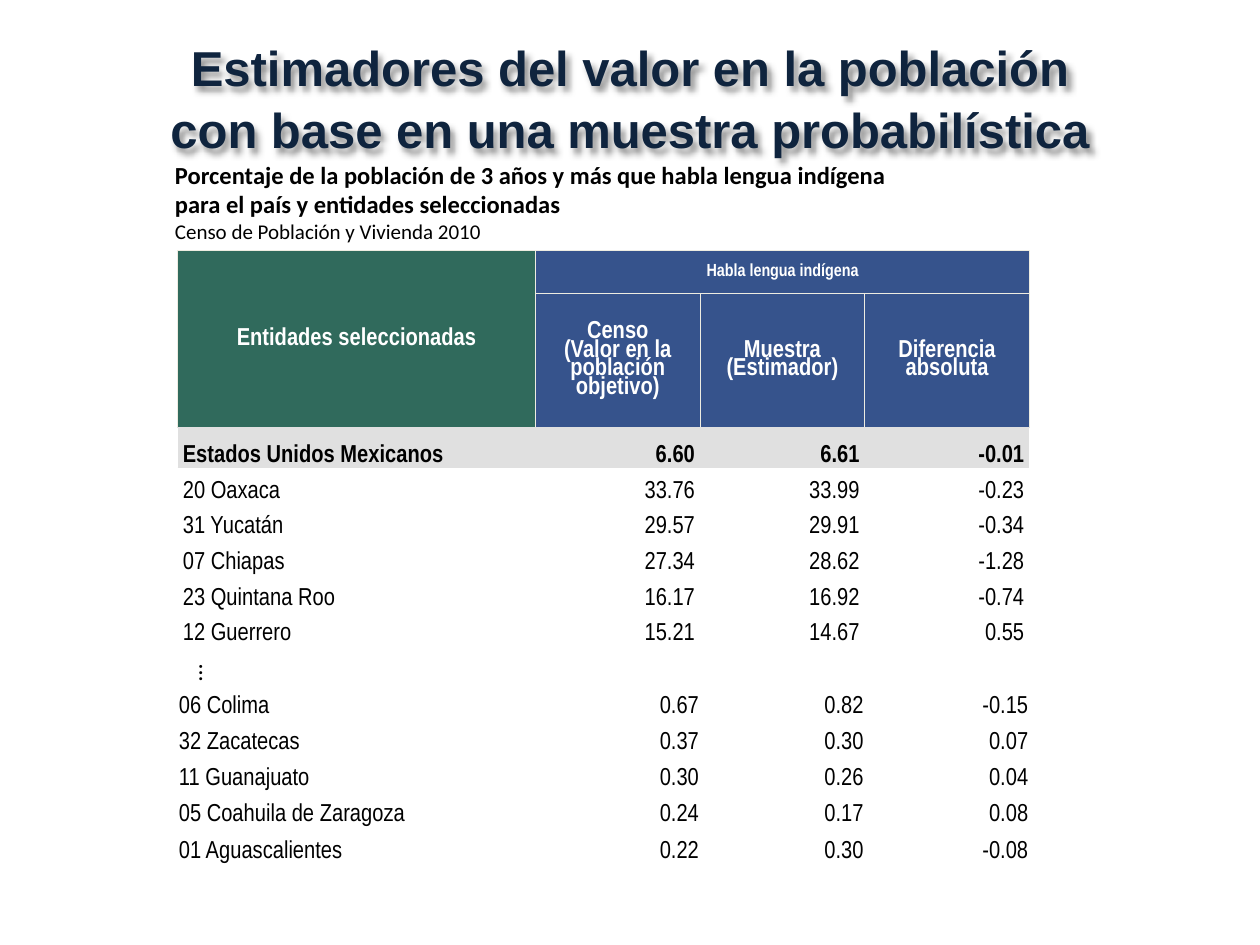
from lxml.etree import SubElement
from pptx import Presentation
from pptx.dml.color import RGBColor
from pptx.enum.text import MSO_ANCHOR, PP_ALIGN
from pptx.oxml import parse_xml
from pptx.oxml.ns import qn
from pptx.util import Pt

NS = 'xmlns:a="http://schemas.openxmlformats.org/drawingml/2006/main"'
LEFT, MID, RIGHT = PP_ALIGN.LEFT, PP_ALIGN.CENTER, PP_ALIGN.RIGHT


def write(par, text, size=14, font="Arial Narrow", color="000000",
          bold=False, align=LEFT, space=None):
    par.text = text
    par.alignment = align
    if space:
        par.line_spacing = space
    for run in par.runs:
        run.font.size = Pt(size)
        run.font.name = font
        run.font.bold = bold
        run.font.color.rgb = RGBColor.from_string(color)


def dress(cell, fill=None, edges=None, side=3, anchor=MSO_ANCHOR.BOTTOM):
    cell.margin_left = cell.margin_right = Pt(side)
    cell.margin_top, cell.margin_bottom = Pt(0.7), Pt(0)
    cell.vertical_anchor = anchor
    props = cell._tc.get_or_add_tcPr()
    for edge, color in (edges or {}).items():
        line = SubElement(props, qn("a:ln" + edge), w=str(Pt(0.5)))
        solid = SubElement(line, qn("a:solidFill"))
        SubElement(solid, qn("a:srgbClr"), val=color)
    if fill:
        cell.fill.solid()
        cell.fill.fore_color.rgb = RGBColor.from_string(fill)
    else:
        cell.fill.background()


prs = Presentation()
prs.slide_width, prs.slide_height = Pt(720), Pt(540)
slide = prs.slides.add_slide(prs.slide_layouts[5])

# Title with a soft shadow
title = slide.shapes.title
title.left, title.top, title.width, title.height = Pt(0), Pt(15), Pt(720), Pt(83)
frame = title.text_frame
frame.word_wrap = True
frame.vertical_anchor = MSO_ANCHOR.TOP
frame.margin_top = Pt(5)
write(frame.paragraphs[0],
      "Estimadores del valor en la población\vcon base en una muestra probabilística",
      size=28, font="Arial", color="0F243E", bold=True, align=MID, space=1.05)
title._element.spPr.append(parse_xml(
    f'<a:effectLst {NS}><a:outerShdw blurRad="{Pt(4)}" dist="{Pt(3)}" dir="2700000" '
    'algn="tl" rotWithShape="0"><a:srgbClr val="000000"><a:alpha val="43000"/>'
    '</a:srgbClr></a:outerShdw></a:effectLst>'))

# Table heading
box = slide.shapes.add_textbox(Pt(92.9), Pt(87.8), Pt(517.7), Pt(55.4))
frame = box.text_frame
frame.word_wrap = True
write(frame.paragraphs[0],
      "Porcentaje de la población de 3 años y más que habla lengua indígena\v"
      "para el país y entidades seleccionadas", font="Calibri", bold=True)
write(frame.add_paragraph(), "Censo de Población y Vivienda 2010", size=12, font="Calibri")

# Table grid
rows = [
    ("Estados Unidos Mexicanos", "6.60", "6.61", "-0.01"),
    ("20 Oaxaca", "33.76", "33.99", "-0.23"),
    ("31 Yucatán", "29.57", "29.91", "-0.34"),
    ("07 Chiapas", "27.34", "28.62", "-1.28"),
    ("23 Quintana Roo", "16.17", "16.92", "-0.74"),
    ("12 Guerrero", "15.21", "14.67", "0.55"),
    ("…", "", "", ""),
    ("06 Colima", "0.67", "0.82", "-0.15"),
    ("32 Zacatecas", "0.37", "0.30", "0.07"),
    ("11 Guanajuato", "0.30", "0.26", "0.04"),
    ("05 Coahuila de Zaragoza", "0.24", "0.17", "0.08"),
    ("01 Aguascalientes", "0.22", "0.30", "-0.08"),
]
wide = [204.5] + [94.1] * 3
high = [24.5, 76.5, 23] + [20.4] * 5 + [20.7] * 6
table = slide.shapes.add_table(len(high), len(wide), Pt(101.5), Pt(143.3),
                               Pt(sum(wide)), Pt(sum(high))).table
table.first_row = table.horz_banding = False
table._tbl.tblPr.find(qn("a:tableStyleId")).text = "{2D5ABB26-0587-4C30-8999-92F81FD0307C}"
for col, size in zip(table.columns, wide):
    col.width = Pt(size)
for row, size in zip(table.rows, high):
    row.height = Pt(size)

# Header cells
table.cell(0, 0).merge(table.cell(1, 0))
table.cell(0, 1).merge(table.cell(0, 3))
pale, gray = "EEECE1", "E0E0E0"
for r in range(2):
    for c in range(4):
        edges = {"L": pale, "R": pale, "T": pale, "B": gray if r or not c else pale}
        dress(table.cell(r, c), "36538C" if c else "306A5C", edges,
              side=3 if r and c in (1, 2) else 0.7, anchor=MSO_ANCHOR.MIDDLE)
heads = [
    (0, 0, ["Entidades seleccionadas"], 14),
    (0, 1, ["Habla lengua indígena"], 10),
    (1, 1, ["Censo", "(Valor en la población objetivo)"], 14),
    (1, 2, ["Muestra", "(Estimador)"], 14),
    (1, 3, ["Diferencia", "absoluta"], 14),
]
for r, c, lines, size in heads:
    frame = table.cell(r, c).text_frame
    for i, line in enumerate(lines):
        par = frame.add_paragraph() if i else frame.paragraphs[0]
        write(par, line, size=size, color="FFFFFF", bold=True, align=MID, space=0.8)

# Data cells: the first row is the national total
for r, row in enumerate(rows):
    for c, text in enumerate(row):
        cell = table.cell(r + 2, c)
        dots = text == "…"
        dress(cell, None if r else gray, None if r else {"T": gray},
              side=3 if r < 6 else 0.7,
              anchor=MSO_ANCHOR.TOP if dots else MSO_ANCHOR.BOTTOM)
        par = cell.text_frame.paragraphs[0]
        write(par, text, font="Calibri" if dots else "Arial Narrow",
              bold=r == 0, align=RIGHT if c else LEFT)
        if dots:
            cell._tc.tcPr.set("vert", "vert270")
        if not text:
            SubElement(par._p, qn("a:endParaRPr"), sz="1400")

prs.save("out.pptx")
